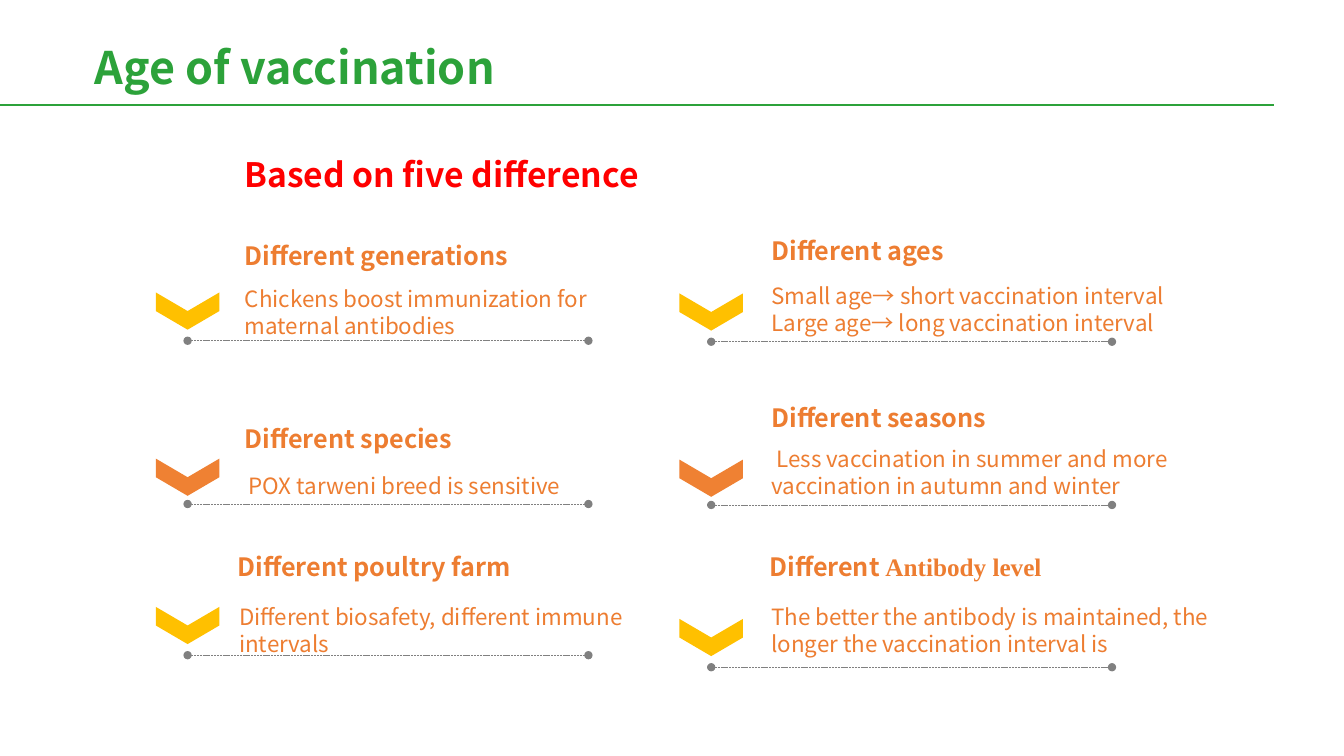
from lxml.etree import SubElement
from pptx import Presentation
from pptx.dml.color import RGBColor
from pptx.enum.dml import MSO_LINE
from pptx.enum.shapes import MSO_CONNECTOR, MSO_SHAPE
from pptx.enum.text import MSO_ANCHOR as Anchor, MSO_AUTO_SIZE as AutoSize, PP_ALIGN as Align
from pptx.oxml.ns import qn
from pptx.util import Pt

GREEN = RGBColor(0x2C, 0xA2, 0x3A)
RED = RGBColor(0xFF, 0x00, 0x00)
ORANGE = RGBColor(0xED, 0x7D, 0x31)
AMBER = RGBColor(0xFF, 0xC0, 0x00)
TANGERINE = RGBColor(0xEF, 0x81, 0x33)
GREY = RGBColor(0x80, 0x80, 0x80)
SANS, SERIF = "Noto Sans CJK SC", "Times New Roman"

# Content: heading and body as lists of lines, each with its place in points
TITLE = "Age of vaccination"
SUBTITLE = "Based on five difference"
CARDS = [
    dict(column=0, rule=243.4, color=AMBER, drop=21.2,
         heading="Different generations", heading_at=(167.8, 167.8),
         body=["Chickens boost immunization for maternal antibodies"],
         body_at=(167.8, 200.2), body_width=279.4),
    dict(column=0, rule=360, color=TANGERINE, drop=19.1,
         heading="Different species", heading_at=(167.8, 298.8),
         body=["POX tarweni breed is sensitive"],
         body_at=(170.6, 333.4), body_width=276.5),
    dict(column=0, rule=468, color=AMBER, drop=21.2,
         heading="Different poultry farm", heading_at=(162.7, 390.2),
         body=["Different biosafety, different immune intervals"],
         body_at=(163.8, 427), body_width=302.4),
    dict(column=1, rule=244.1, color=AMBER, drop=21.2,
         heading="Different ages", heading_at=(544, 164.5),
         body=["Small age→ short vaccination interval",
               "Large age→ long vaccination interval"],
         body_at=(544, 198), body_width=342),
    dict(column=1, rule=360.7, color=TANGERINE, drop=19.1,
         heading="Different seasons", heading_at=(544, 283.7),
         body=["Less vaccination in summer and more vaccination in autumn and winter"],
         body_at=(544, 314.6), body_width=370.8, indent=3.6),
    dict(column=1, rule=476.6, color=AMBER, drop=21.2,
         heading="Different ", heading_tail="Antibody level", heading_at=(542.6, 390.2),
         body=["The better the antibody is maintained, the longer the vaccination interval is"],
         body_at=(544, 427), body_width=342),
]

# Layout in points
COLUMN_X = (134, 508)
RULE_LENGTH = 286.3
CHEVRON_WIDTH, CHEVRON_HEIGHT = 26.6, 45.4

deck = Presentation()
deck.slide_width, deck.slide_height = Pt(960), Pt(540)
page = deck.slides.add_slide(deck.slide_layouts[5])


def write(box, lines, size, color, bold=False, anchor=Anchor.TOP, spacing=None,
          indent=0, tail=""):
    """Fill a box with lines; tail is a serif ending of the last line."""
    frame = box.text_frame
    frame.word_wrap = True
    frame.auto_size = AutoSize.NONE
    frame.vertical_anchor = anchor
    for number, line in enumerate(lines):
        para = frame.add_paragraph() if number else frame.paragraphs[0]
        para.alignment = Align.LEFT
        para.line_spacing = spacing
        if indent:
            para._p.get_or_add_pPr().set("indent", str(Pt(indent)))
        pieces = [(line, SANS)]
        if tail and number == len(lines) - 1:
            pieces.append((tail, SERIF))
        for text, font_name in pieces:
            span = para.add_run()
            span.text = text
            span.font.name = font_name
            span.font.size = Pt(size)
            span.font.bold = bold
            span.font.color.rgb = color


def text_box(left, top, width, height, lines, **style):
    box = page.shapes.add_textbox(Pt(left), Pt(top), Pt(width), Pt(height))
    write(box, lines, **style)


def rule(left, right, y, color, weight, dotted=False):
    line = page.shapes.add_connector(MSO_CONNECTOR.STRAIGHT, Pt(left), Pt(y), Pt(right), Pt(y))
    line.line.color.rgb = color
    line.line.width = Pt(weight)
    if dotted:
        line.line.dash_style = MSO_LINE.SQUARE_DOT
        outline = line.line._get_or_add_ln()
        for end in ("a:headEnd", "a:tailEnd"):
            SubElement(outline, qn(end), type="oval")
    SubElement(line._element.spPr, qn("a:effectLst"))


def chevron(center_x, center_y, color):
    mark = page.shapes.add_shape(
        MSO_SHAPE.CHEVRON, Pt(center_x - CHEVRON_WIDTH / 2), Pt(center_y - CHEVRON_HEIGHT / 2),
        Pt(CHEVRON_WIDTH), Pt(CHEVRON_HEIGHT))
    mark.rotation = 90
    mark.shadow.inherit = False
    mark.fill.solid()
    mark.fill.fore_color.rgb = color
    mark.line.fill.background()


# Title, its line and the subtitle
title = page.shapes.title
title.left, title.top, title.width, title.height = Pt(60.5), Pt(28.8), Pt(805), Pt(41.8)
write(title, [TITLE], size=32, color=GREEN, bold=True, anchor=Anchor.MIDDLE, spacing=0.9)
rule(0, 910, 74.9, GREEN, 1.5)
text_box(167.6, 106.2, 350, 36, [SUBTITLE], size=24, color=RED, bold=True)

# Six cards: chevron, dotted rule, heading and body
for card in CARDS:
    x = COLUMN_X[card["column"]]
    chevron(x, card["rule"] - card["drop"], card["color"])
    rule(x, x + RULE_LENGTH, card["rule"], GREY, 0.5, dotted=True)
    text_box(*card["heading_at"], 244, 29, [card["heading"]], size=18, color=ORANGE,
             bold=True, tail=card.get("heading_tail", ""))
    text_box(*card["body_at"], card["body_width"], 46, card["body"], size=16, color=ORANGE,
             indent=card.get("indent", 0))

deck.save("out.pptx")
